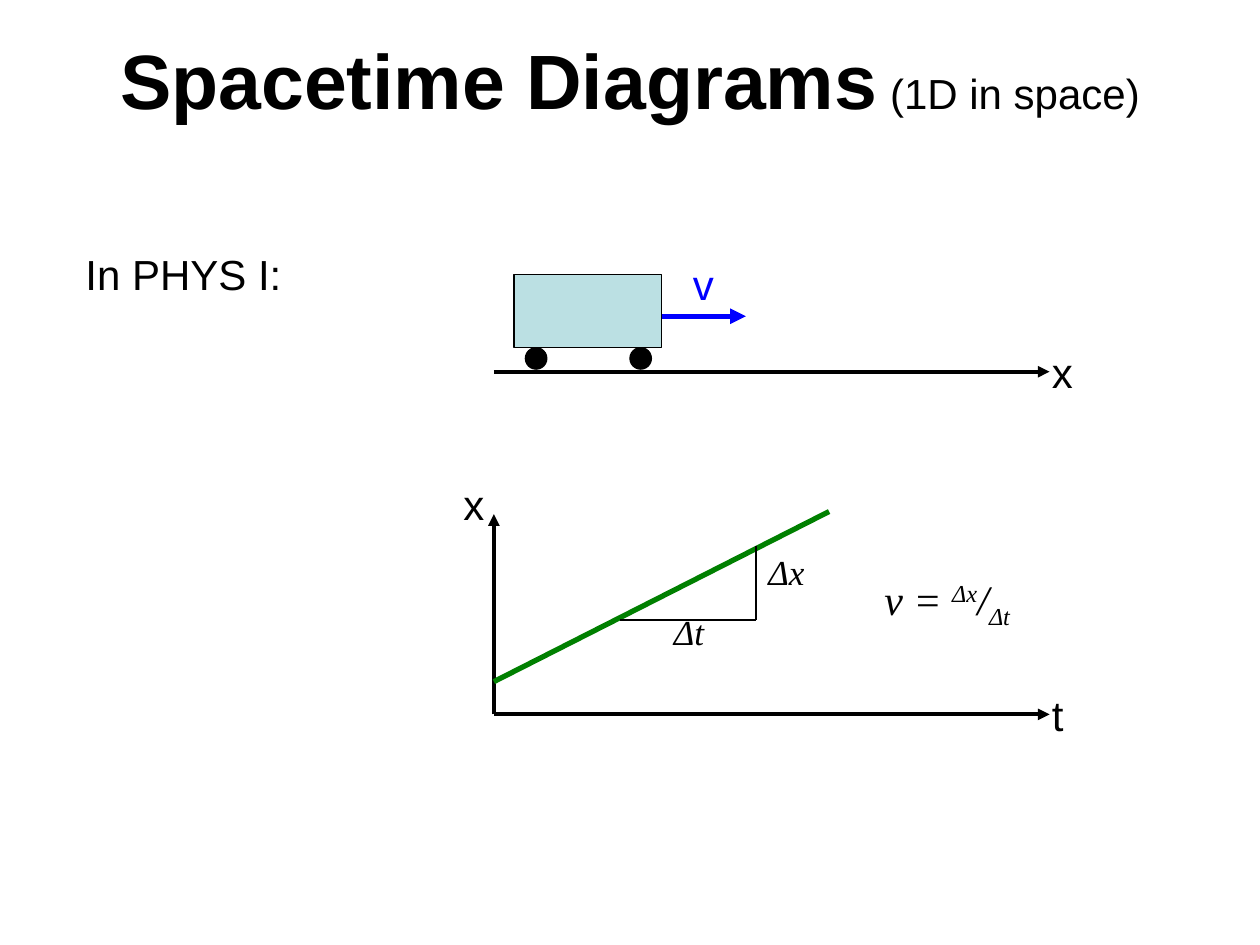
from dataclasses import dataclass

from lxml import etree
from pptx import Presentation
from pptx.dml.color import RGBColor
from pptx.enum.shapes import MSO_CONNECTOR, MSO_SHAPE
from pptx.enum.text import MSO_ANCHOR, MSO_AUTO_SIZE, PP_ALIGN
from pptx.oxml.ns import qn
from pptx.util import Inches, Pt

STRAIGHT = MSO_CONNECTOR.STRAIGHT
RECTANGLE, OVAL = MSO_SHAPE.RECTANGLE, MSO_SHAPE.OVAL
MIDDLE, CENTER = MSO_ANCHOR.MIDDLE, PP_ALIGN.CENTER
NO_FIT, GROW = MSO_AUTO_SIZE.NONE, MSO_AUTO_SIZE.SHAPE_TO_FIT_TEXT
TITLE_ONLY = 5


@dataclass(frozen=True)
class Theme:
    ink: RGBColor = RGBColor(0, 0, 0)
    cart: RGBColor = RGBColor(0xBB, 0xE0, 0xE3)
    velocity: RGBColor = RGBColor(0, 0, 0xFF)
    worldline: RGBColor = RGBColor(0, 0x80, 0)
    sans: str = "Arial"
    math: str = "Times New Roman"
    title_size: float = 44
    text_size: float = 24
    delta_size: float = 20
    thin: float = 0.75
    axis: float = 2.25
    heavy: float = 3


class DiagramSlide:
    """Draws styled elements on one slide; lengths are in inches."""

    def __init__(self, slide, theme):
        self.slide = slide
        self.theme = theme

    def format_run(self, run, size, color=None, font=None, bold=False, italic=False):
        run.font.size = Pt(size)
        run.font.name = font or self.theme.sans
        run.font.color.rgb = color or self.theme.ink
        run.font.bold = bold
        run.font.italic = italic

    def title(self, main, aside):
        heading = self.slide.shapes.title
        heading.left, heading.top = Inches(0.5), Inches(0)
        heading.width, heading.height = Inches(9), Inches(1.25)
        frame = heading.text_frame
        frame.auto_size = NO_FIT
        frame.vertical_anchor = MIDDLE
        paragraph = frame.paragraphs[0]
        paragraph.text = main
        paragraph.alignment = CENTER
        self.format_run(paragraph.runs[0], self.theme.title_size, bold=True)
        aside_run = paragraph.add_run()
        aside_run.text = aside
        self.format_run(aside_run, self.theme.text_size)

    def label(self, text, left, top, width, height, color=None):
        return self.text_box([(text, 0)], left, top, width, height,
                             self.theme.text_size, color=color)

    def formula(self, parts, left, top, width, height, size):
        return self.text_box(parts, left, top, width, height, size,
                             font=self.theme.math, italic=True)

    def text_box(self, parts, left, top, width, height, size, **style):
        """Parts are (text, baseline shift in percent) pairs."""
        box = self.slide.shapes.add_textbox(
            Inches(left), Inches(top), Inches(width), Inches(height))
        frame = box.text_frame
        frame.word_wrap = False
        frame.auto_size = GROW
        for text, shift in parts:
            run = frame.paragraphs[0].add_run()
            run.text = text
            self.format_run(run, size, **style)
            if shift:
                run.font._element.set("baseline", str(shift * 1000))

    def shape(self, kind, left, top, width, height, fill):
        shape = self.slide.shapes.add_shape(
            kind, Inches(left), Inches(top), Inches(width), Inches(height))
        shape.shadow.inherit = False
        shape.fill.solid()
        shape.fill.fore_color.rgb = fill
        shape.line.color.rgb = self.theme.ink
        shape.line.width = Pt(self.theme.thin)

    def line(self, start, end, width, color=None, arrow=False):
        points = [Inches(value) for value in (*start, *end)]
        connector = self.slide.shapes.add_connector(STRAIGHT, *points)
        connector.line.color.rgb = color or self.theme.ink
        connector.line.width = Pt(width)
        if arrow:
            outline = connector.line._get_or_add_ln()
            etree.SubElement(outline, qn("a:tailEnd"), type="triangle")
        etree.SubElement(connector._element.spPr, qn("a:effectLst"))


def main():
    presentation = Presentation()
    presentation.slide_width, presentation.slide_height = Inches(10), Inches(7.5)
    theme = Theme()
    diagram = DiagramSlide(
        presentation.slides.add_slide(presentation.slide_layouts[TITLE_ONLY]), theme)

    diagram.title("Spacetime Diagrams", " (1D in space)")
    diagram.label("In PHYS I:", 0.58, 1.92, 1.77, 0.5)

    # Horizontal axes: the track in space and the time axis of the graph
    axis_left, axis_right = 3.92, 8.33
    track_y, origin_y = 2.95, 5.67
    for name, y, width in (("x", track_y, 0.4), ("t", origin_y, 0.31)):
        diagram.line((axis_left, y), (axis_right, y), theme.axis, arrow=True)
        diagram.label(name, 8.25, y - 0.25, width, 0.57)

    # Cart with two wheels
    cart_left, cart_top, cart_width, cart_height = 4.08, 2.18, 1.17, 0.58
    diagram.shape(RECTANGLE, cart_left, cart_top, cart_width, cart_height, theme.cart)
    for wheel_left in (4.17, 5):
        diagram.shape(OVAL, wheel_left, cart_top + cart_height, 0.17, 0.17, theme.ink)

    # Velocity arrow
    cart_right = cart_left + cart_width
    diagram.line((cart_right, 2.51), (5.92, 2.51), theme.heavy, theme.velocity, arrow=True)
    diagram.label("v", 5.4, 2, 0.4, 0.57, theme.velocity)

    # Position axis and worldline
    diagram.line((axis_left, origin_y), (axis_left, 4.08), theme.axis, arrow=True)
    diagram.label("x", 3.58, 3.75, 0.4, 0.57)
    diagram.line((axis_left, 5.41), (6.58, 4.06), theme.heavy, theme.worldline)

    # Slope triangle
    corner = (6, 4.92)
    for start in ((4.92, 4.92), (6, 4.33)):
        diagram.line(start, corner, theme.thin)
    diagram.formula([("Δx", 0)], 6, 4.32, 0.49, 0.43, theme.delta_size)
    diagram.formula([("Δt", 0)], 5.25, 4.8, 0.44, 0.43, theme.delta_size)

    # Velocity as the slope
    diagram.formula([("v = ", 0), ("Δx", 30), ("/", 0), ("Δt", -25)],
                    6.92, 4.5, 1.26, 0.5, theme.text_size)

    presentation.save("out.pptx")


if __name__ == "__main__":
    main()
